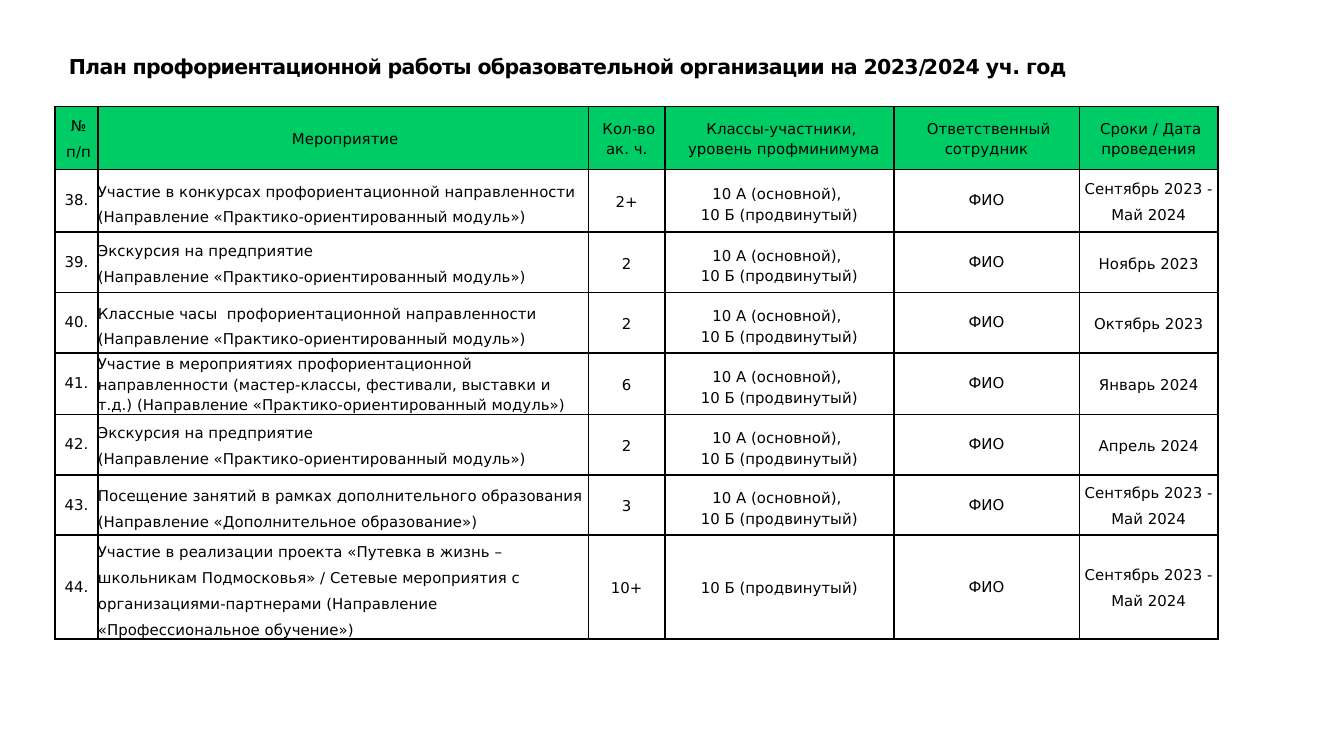
from lxml import etree
from pptx import Presentation
from pptx.dml.color import RGBColor
from pptx.enum.text import MSO_ANCHOR, MSO_AUTO_SIZE, PP_ALIGN
from pptx.oxml.ns import qn
from pptx.util import Cm, Pt

CENTER = PP_ALIGN.CENTER
LEFT = PP_ALIGN.LEFT
MIDDLE = MSO_ANCHOR.MIDDLE
TOP = MSO_ANCHOR.TOP
GROW = MSO_AUTO_SIZE.SHAPE_TO_FIT_TEXT

BLACK = RGBColor(0x00, 0x00, 0x00)
WHITE = RGBColor(0xFF, 0xFF, 0xFF)
GREEN = RGBColor(0x00, 0xCC, 0x66)
FONT = "DejaVu Sans"

TITLE_RUNS = [
    ("План профориентационной работы образовательной организации на 2023", -0.4),
    ("/2", -1.4),
    ("024 уч. год", -0.3),
]
COLUMN_WIDTHS = [0.81, 9.27, 1.45, 4.32, 3.51, 2.62]
ROW_HEIGHTS = [1.19, 1.19, 1.14, 1.14, 1.17, 1.14, 1.14, 1.96]
HEADERS = [
    ["№", "п/п"],
    ["Мероприятие"],
    ["Кол-во ак. ч."],
    ["Классы-участники,", " уровень профминимума"],
    ["Ответственный сотрудник"],
    ["Сроки / Дата проведения"],
]

FIRST_NUMBER = 38
PRACTICE = "(Направление «Практико-ориентированный модуль»)"
EXCURSION = ["Экскурсия на предприятие", PRACTICE]
BASIC = "10 А (основной), "
ADVANCED = "10 Б (продвинутый)"
BOTH = [BASIC, ADVANCED]
SCHOOL_YEAR = ["Сентябрь 2023 -", "Май 2024"]
EVENTS = [
    (["Участие в конкурсах профориентационной направленности " + PRACTICE],
     13.4, "2+", BOTH, SCHOOL_YEAR),
    (EXCURSION, 11, "2", BOTH, ["Ноябрь 2023"]),
    (["Классные часы  профориентационной направленности " + PRACTICE],
     13.4, "2", BOTH, ["Октябрь 2023"]),
    (["Участие в мероприятиях профориентационной направленности "
      "(мастер-классы, фестивали, выставки и т.д.) " + PRACTICE],
     11, "6", BOTH, ["Январь 2024"]),
    (EXCURSION, 11, "2", BOTH, ["Апрель 2024"]),
    (["Посещение занятий в рамках дополнительного образования "
      "(Направление «Дополнительное образование»)"],
     13.9, "3", BOTH, SCHOOL_YEAR),
    (["Участие в реализации проекта «Путевка в жизнь – школьникам Подмосковья» / "
      "Сетевые мероприятия с организациями-партнерами "
      "(Направление «Профессиональное обучение»)"],
     13.9, "10+", [ADVANCED], SCHOOL_YEAR),
]


def format_font(font, size, bold=False):
    font.name = FONT
    font.size = Pt(size)
    font.bold = bold
    font.color.rgb = BLACK


def add_title(page):
    title = page.shapes.title
    title.left, title.top = Cm(0.86), Cm(0.99)
    title.width, title.height = Cm(19.74), Cm(0.51)
    frame = title.text_frame
    frame.margin_left = frame.margin_right = frame.margin_bottom = 0
    frame.margin_top = Cm(0.03)
    frame.vertical_anchor = TOP
    frame.word_wrap = True
    frame.auto_size = GROW
    para = frame.paragraphs[0]
    para.alignment = CENTER
    for text, spacing in TITLE_RUNS:
        span = para.add_run()
        span.text = text
        format_font(span.font, 11, True)
        span.font._element.set("spc", str(round(spacing * 100)))


def add_borders(cell):
    properties = cell._tc.get_or_add_tcPr()
    for position, side in enumerate(("lnL", "lnR", "lnT", "lnB")):
        line = etree.Element(qn("a:" + side), w=str(Pt(1)))
        fill = etree.SubElement(line, qn("a:solidFill"))
        etree.SubElement(fill, qn("a:srgbClr"), val=str(BLACK))
        properties.insert(position, line)


def fill_cell(cell, lines, color=WHITE, align=CENTER, spacings=None, after=0, indent=0):
    cell.margin_left = cell.margin_right = cell.margin_top = cell.margin_bottom = 0
    cell.vertical_anchor = MIDDLE
    cell.fill.solid()
    cell.fill.fore_color.rgb = color
    add_borders(cell)
    frame = cell.text_frame
    frame.text = "\n".join(lines)
    for index, para in enumerate(frame.paragraphs):
        para.alignment = align
        if spacings:
            para.line_spacing = Pt(spacings[index])
        para.space_after = Pt(after)
        if indent:
            para._p.get_or_add_pPr().set("indent", str(Cm(indent)))
        for span in para.runs:
            format_font(span.font, 8)


def add_plan_table(page):
    table = page.shapes.add_table(
        len(ROW_HEIGHTS), len(COLUMN_WIDTHS), Cm(1.04), Cm(2.01),
        Cm(sum(COLUMN_WIDTHS)), Cm(sum(ROW_HEIGHTS))).table
    for column, width in zip(table.columns, COLUMN_WIDTHS):
        column.width = Cm(width)
    for row, height in zip(table.rows, ROW_HEIGHTS):
        row.height = Cm(height)

    for column, lines in enumerate(HEADERS):
        after = {0: 3, 4: 6, 5: 6}.get(column, 0)
        fill_cell(table.cell(0, column), lines, GREEN,
                  spacings=[11] * len(lines), after=after, indent=0.08)

    for row, (event, spacing, hours, classes, dates) in enumerate(EVENTS, 1):
        cells = table.rows[row].cells
        fill_cell(cells[0], [f"{FIRST_NUMBER + row - 1}."])
        fill_cell(cells[1], event, align=LEFT, spacings=[spacing] * len(event),
                  after=3 if len(event) > 1 else 0)
        fill_cell(cells[2], [hours], spacings=[11])
        fill_cell(cells[3], classes,
                  spacings=[13.7 if line == BASIC else 11 for line in classes])
        fill_cell(cells[4], ["ФИО"])
        fill_cell(cells[5], dates, spacings=[11] * len(dates), after=3)


def main():
    deck = Presentation()
    deck.slide_width, deck.slide_height = Cm(25.4), Cm(14.29)
    page = deck.slides.add_slide(deck.slide_layouts[5])
    add_title(page)
    add_plan_table(page)
    deck.save("out.pptx")


if __name__ == "__main__":
    main()
